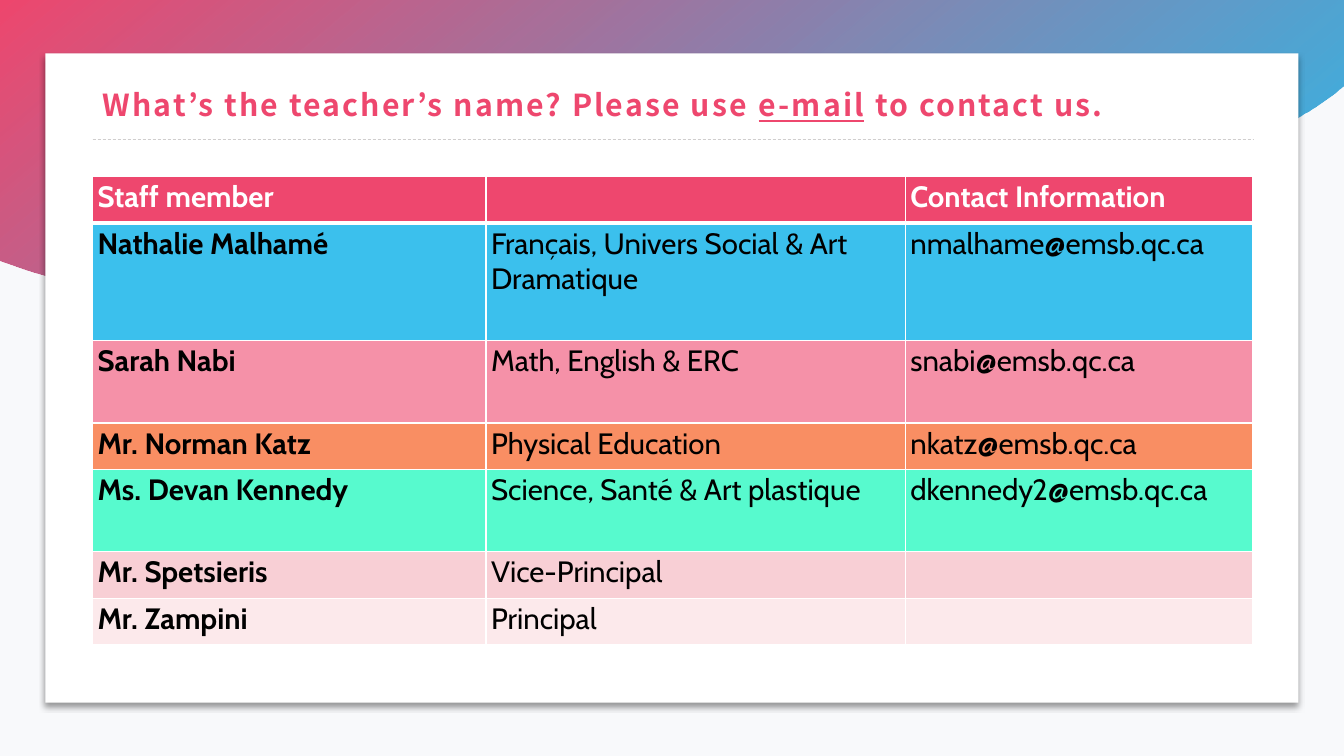
from lxml.etree import SubElement
from pptx import Presentation
from pptx.dml.color import RGBColor
from pptx.enum.dml import MSO_LINE
from pptx.enum.shapes import MSO_CONNECTOR, MSO_SHAPE
from pptx.enum.text import MSO_ANCHOR, MSO_AUTO_SIZE, PP_ALIGN
from pptx.oxml import parse_xml
from pptx.oxml.ns import nsdecls, qn
from pptx.util import Pt

PINK = RGBColor(0xEE, 0x47, 0x6E)
BLUE = RGBColor(0x16, 0xB3, 0xE8)
WHITE = RGBColor(0xFF, 0xFF, 0xFF)
BLACK = RGBColor(0x00, 0x00, 0x00)
PALE_GRAY = RGBColor(0xF8, 0xF9, 0xFB)
RULE_GRAY = RGBColor(0xD0, 0xCE, 0xCE)
SKY = RGBColor(0x3B, 0xC0, 0xED)
ROSE = RGBColor(0xF5, 0x91, 0xA8)
ORANGE = RGBColor(0xF9, 0x8E, 0x63)
MINT = RGBColor(0x57, 0xFA, 0xCE)
BLUSH = RGBColor(0xF8, 0xCF, 0xD5)
PALE_PINK = RGBColor(0xFC, 0xE9, 0xEB)

WAVE_START = (0, 185.8)
WAVE_CURVES = [
    ((87.8, 218.9), (191.5, 223.9), (283, 197.3)),
    ((381.6, 169.2), (466.6, 108.7), (570.2, 97.9)),
    ((673.9, 87.1), (783.4, 129.6), (883.4, 102.2)),
    ((912.2, 94.3), (937.4, 79.9), (960, 61.2)),
]
CURVE_STEPS = 30

COLUMN_WIDTHS = [281, 299.5, 248]
STAFF_ROWS = [
    (33.2, PINK, "Staff member", "", "Contact Information"),
    (84.2, SKY, "Nathalie Malhamé", "Français, Univers Social & Art Dramatique", "nmalhame@emsb.qc.ca"),
    (58.8, ROSE, "Sarah Nabi", "Math, English & ERC", "snabi@emsb.qc.ca"),
    (33.2, ORANGE, "Mr. Norman Katz", "Physical Education", "nkatz@emsb.qc.ca"),
    (58.8, MINT, "Ms. Devan Kennedy", "Science, Santé & Art plastique", "dkennedy2@emsb.qc.ca"),
    (33.2, BLUSH, "Mr. Spetsieris", "Vice-Principal", ""),
    (33.2, PALE_PINK, "Mr. Zampini", "Principal", ""),
]


def curve_points(start, curve):
    for step in range(1, CURVE_STEPS + 1):
        t = step / CURVE_STEPS
        weights = ((1 - t) ** 3, 3 * t * (1 - t) ** 2, 3 * t**2 * (1 - t), t**3)
        controls = (start, *curve)
        yield tuple(
            Pt(sum(weight * point[axis] for weight, point in zip(weights, controls)))
            for axis in (0, 1)
        )


def add_borders(cell, bottom_width):
    properties = cell._tc.get_or_add_tcPr()
    widths = {"lnL": 1, "lnR": 1, "lnT": 1, "lnB": bottom_width}
    for index, (side, width) in enumerate(widths.items()):
        border = parse_xml(
            f'<a:{side} {nsdecls("a")} w="{Pt(width)}"><a:solidFill>'
            f'<a:srgbClr val="{WHITE}"/></a:solidFill></a:{side}>'
        )
        properties.insert(index, border)


presentation = Presentation()
presentation.slide_width = Pt(960)
presentation.slide_height = Pt(540)
slide = presentation.slides.add_slide(presentation.slide_layouts[5])
slide.background.fill.solid()
slide.background.fill.fore_color.rgb = PALE_GRAY

builder = slide.shapes.build_freeform(Pt(0), Pt(0))
builder.add_line_segments([(Pt(0), Pt(WAVE_START[1]))], close=False)
curve_start = WAVE_START
for curve in WAVE_CURVES:
    builder.add_line_segments(curve_points(curve_start, curve), close=False)
    curve_start = curve[-1]
builder.add_line_segments([(Pt(960), Pt(0))], close=True)
wave = builder.convert_to_shape()
wave.shadow.inherit = False
wave.line.fill.background()
wave.fill.gradient()
wave.fill.gradient_angle = 310
for stop, color in zip(wave.fill.gradient_stops, (PINK, BLUE)):
    stop.color.rgb = color
last_color = list(wave.element.iter(qn("a:gs")))[-1][0]
SubElement(last_color, qn("a:alpha"), val="90000")

card = slide.shapes.add_shape(MSO_SHAPE.RECTANGLE, Pt(32.5), Pt(38.2), Pt(895), Pt(463.7))
card.fill.solid()
card.fill.fore_color.rgb = WHITE
card.line.fill.background()
card.shadow.inherit = False
card.element.spPr.find(qn("a:effectLst")).append(parse_xml(
    f'<a:outerShdw {nsdecls("a")} blurRad="{Pt(4)}" dist="{Pt(3)}" dir="5400000" '
    'algn="t" rotWithShape="0"><a:srgbClr val="000000"><a:alpha val="40000"/>'
    '</a:srgbClr></a:outerShdw>'
))

rule = slide.shapes.add_connector(MSO_CONNECTOR.STRAIGHT, Pt(66.2), Pt(99.4), Pt(895), Pt(99.4))
rule.line.color.rgb = RULE_GRAY
rule.line.width = Pt(0.5)
rule.line.dash_style = MSO_LINE.DASH
SubElement(rule.element.spPr, qn("a:effectLst"))

title = slide.shapes.title
title.element.getparent().append(title.element)
title.left, title.top, title.width, title.height = Pt(66.2), Pt(53.3), Pt(843), Pt(46)
title.text_frame.auto_size = MSO_AUTO_SIZE.NONE
title.text_frame.vertical_anchor = MSO_ANCHOR.MIDDLE
paragraph = title.text_frame.paragraphs[0]
paragraph.alignment = PP_ALIGN.LEFT
paragraph.line_spacing = 0.9
paragraph.font.name = "Noto Sans CJK JP"
paragraph.font.size = Pt(21.6)
paragraph.font.bold = True
paragraph.font.color.rgb = PINK
for text in ("What’s the teacher’s name? Please use ", "e-mail", " to contact us."):
    run = paragraph.add_run()
    run.text = text
    run.font.underline = text == "e-mail"
for properties in title.element.iter(qn("a:defRPr"), qn("a:rPr")):
    properties.set("spc", "150")

table = slide.shapes.add_table(
    len(STAFF_ROWS), len(COLUMN_WIDTHS), Pt(66.2), Pt(126), Pt(828.5), Pt(334.6)
).table
for column, width in zip(table.columns, COLUMN_WIDTHS):
    column.width = Pt(width)
for row_index, (height, color, *texts) in enumerate(STAFF_ROWS):
    table.rows[row_index].height = Pt(height)
    is_header = row_index == 0
    for column_index, text in enumerate(texts):
        cell = table.cell(row_index, column_index)
        cell.margin_left = cell.margin_right = Pt(3.6)
        cell.margin_top = cell.margin_bottom = Pt(2)
        cell.fill.solid()
        cell.fill.fore_color.rgb = color
        add_borders(cell, 3 if is_header else 1)
        cell.text = text
        font = cell.text_frame.paragraphs[0].font
        font.name = "Cabin"
        font.size = Pt(21)
        font.bold = is_header or column_index == 0
        font.color.rgb = WHITE if is_header else BLACK

presentation.save("out.pptx")
